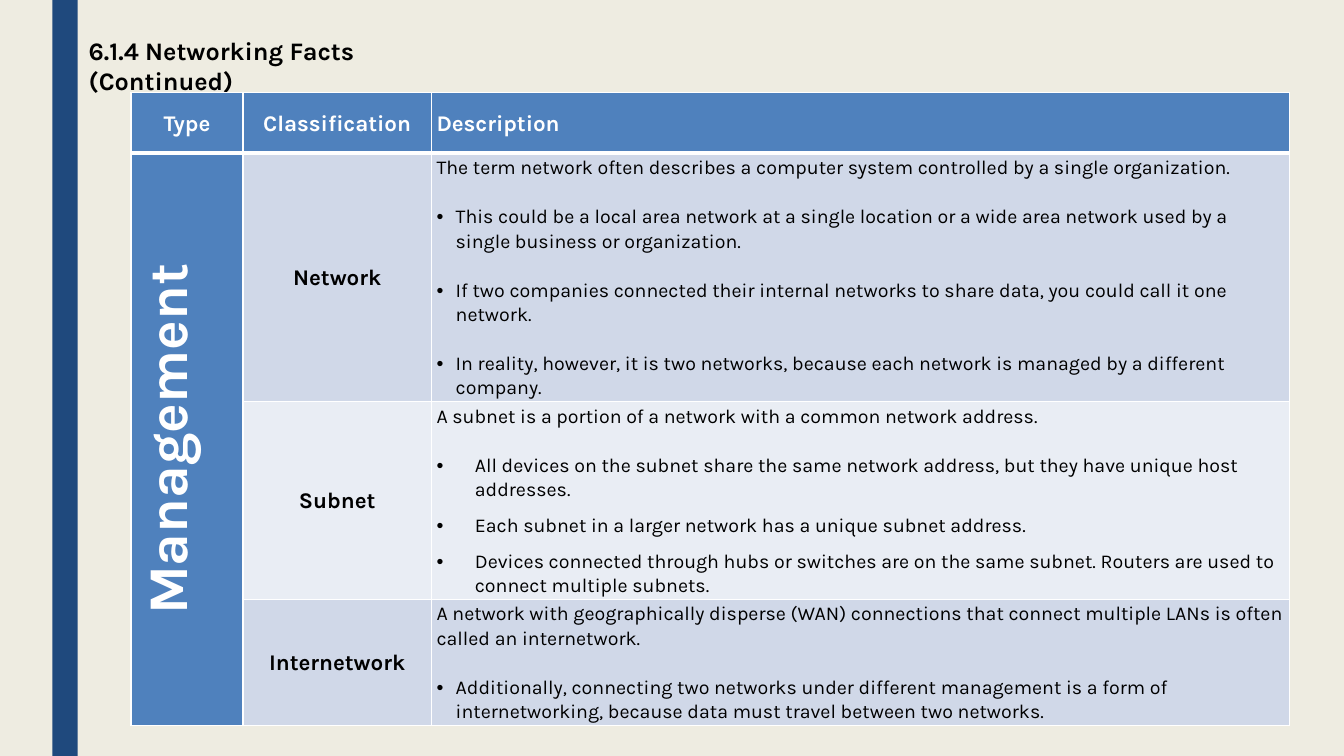
from dataclasses import dataclass
from typing import Any

from pptx import Presentation
from pptx import util as u
from pptx.dml.color import RGBColor
from pptx.enum import shapes, text
from pptx.oxml.ns import qn
from lxml import etree

FONT = "Karla"
BLACK, WHITE = "000000", "FFFFFF"
NAVY, BLUE, CREAM = "1F497D", "4F81BD", "EEECE1"
BAND_DARK, BAND_LIGHT = "D0D8E8", "E9EDF4"
LINE_SPACING = 1.07
BLANK_LINE = 17.5  # points: the gap that sets off a bullet
CENTER, LEFT = text.PP_ALIGN.CENTER, text.PP_ALIGN.LEFT


@dataclass
class Line:
    """One paragraph of a cell; a bullet hangs by its indent in inches."""
    words: str
    indent: float = 0
    before: float = 0
    after: float = 0


@dataclass
class Classification:
    name: str
    fill: str
    height: float
    lines: list[Line]


HEADINGS = [("Type", 1.11, CENTER), ("Classification", 1.87, CENTER), ("Description", 8.51, LEFT)]
HEADER_HEIGHT = 0.6
CLASSIFICATIONS = [
    Classification("Network", BAND_DARK, 2.17, [
        Line("The term network often describes a computer system controlled by a single organization."),
        Line("This could be a local area network at a single location or a wide area network "
             "used by a single business or organization.", 0.19, BLANK_LINE),
        Line("If two companies connected their internal networks to share data, "
             "you could call it one network.", 0.19, BLANK_LINE),
        Line("In reality, however, it is two networks, because each network is managed "
             "by a different company.", 0.19, BLANK_LINE),
    ]),
    Classification("Subnet", BAND_LIGHT, 1.69, [
        Line("A subnet is a portion of a network with a common network address."),
        Line("All devices on the subnet share the same network address, but they have "
             "unique host addresses.", 0.38, BLANK_LINE, 8),
        Line("Each subnet in a larger network has a unique subnet address.", 0.38, 0, 8),
        Line("Devices connected through hubs or switches are on the same subnet. "
             "Routers are used to connect multiple subnets.", 0.38, 0, 8),
    ]),
    Classification("Internetwork", BAND_DARK, 1.19, [
        Line("A network with geographically disperse (WAN) connections that connect "
             "multiple LANs is often called an internetwork."),
        Line("Additionally, connecting two networks under different management is a form of "
             "internetworking, because data must travel between two networks.", 0.19, BLANK_LINE),
    ]),
]


def color(value: str) -> RGBColor:
    return RGBColor.from_string(value)


def apply(target: Any, values: dict[str, Any]) -> None:
    for name, value in values.items():
        setattr(target, name, value)


def paint(target: Any, value: str) -> None:
    target.fill.solid()
    target.fill.fore_color.rgb = color(value)


def write(para: Any, words: str, size: float, ink: str, bold: bool) -> None:
    span = para.add_run()
    span.text = words
    apply(span.font, {"name": FONT, "size": u.Pt(size), "bold": bold})
    span.font.color.rgb = color(ink)


def add_bullet(para: Any, indent: float) -> None:
    properties = para._p.get_or_add_pPr()
    properties.set("marL", str(u.Inches(indent)))
    properties.set("indent", str(u.Inches(-indent)))
    etree.SubElement(properties, qn("a:buFont"), typeface="Arial")
    etree.SubElement(properties, qn("a:buChar"), char="•")


def add_borders(cell: Any, top: float = 1, bottom: float = 1) -> None:
    properties = cell._tc.get_or_add_tcPr()
    for side, width in {"L": 1, "R": 1, "T": top, "B": bottom}.items():
        line = etree.SubElement(properties, qn(f"a:ln{side}"), w=str(u.Pt(width)))
        fill = etree.SubElement(line, qn("a:solidFill"))
        etree.SubElement(fill, qn("a:srgbClr"), val=WHITE)


def format_cell(cell: Any, fill: str, top: float = 1, bottom: float = 1,
                margin: float = 0.01, anchor: Any = text.MSO_ANCHOR.MIDDLE) -> None:
    add_borders(cell, top, bottom)
    paint(cell, fill)
    apply(cell, {
        "margin_left": u.Inches(0.05), "margin_right": u.Inches(0.05),
        "margin_top": u.Inches(margin), "margin_bottom": u.Inches(margin),
        "vertical_anchor": anchor,
    })


def write_label(cell: Any, words: str, size: float, ink: str,
                align: Any = CENTER, space: float = 0) -> None:
    para = cell.text_frame.paragraphs[0]
    apply(para, {"alignment": align, "line_spacing": LINE_SPACING,
                 "space_before": u.Pt(space), "space_after": u.Pt(space)})
    write(para, words, size, ink, True)


def write_description(cell: Any, lines: list[Line]) -> None:
    frame = cell.text_frame
    for index, line in enumerate(lines):
        para = frame.add_paragraph() if index else frame.paragraphs[0]
        apply(para, {"alignment": LEFT, "line_spacing": LINE_SPACING,
                     "space_before": u.Pt(line.before), "space_after": u.Pt(line.after)})
        if line.indent:
            add_bullet(para, line.indent)
        write(para, line.words, 14, BLACK, False)


def add_side_bar(page: Any) -> None:
    bar = page.shapes.add_shape(shapes.MSO_SHAPE.RECTANGLE, u.Inches(0.52), 0,
                                u.Inches(0.25), u.Inches(7.5))
    paint(bar, NAVY)
    bar.line.fill.background()
    bar.shadow.inherit = False


def add_title(page: Any) -> None:
    title = page.shapes.title
    apply(title, {"left": u.Inches(0.78), "top": u.Inches(0.3),
                  "width": u.Inches(3.88), "height": u.Inches(0.4)})
    frame = title.text_frame
    apply(frame, {"word_wrap": True, "auto_size": text.MSO_AUTO_SIZE.NONE,
                  "vertical_anchor": text.MSO_ANCHOR.TOP})
    para = frame.paragraphs[0]
    apply(para, {"alignment": LEFT, "line_spacing": 1.0, "space_before": u.Pt(0)})
    write(para, "6.1.4 Networking Facts (Continued)", 18, BLACK, True)


def add_facts_table(page: Any) -> None:
    heights = [HEADER_HEIGHT] + [item.height for item in CLASSIFICATIONS]
    widths = [width for _, width, _ in HEADINGS]
    table = page.shapes.add_table(len(heights), len(widths), u.Inches(1.3), u.Inches(0.92),
                                  u.Inches(sum(widths)), u.Inches(sum(heights))).table
    for column, width in zip(table.columns, widths):
        column.width = u.Inches(width)
    for row, height in zip(table.rows, heights):
        row.height = u.Inches(height)

    # Header row
    for index, (heading, _, align) in enumerate(HEADINGS):
        cell = table.cell(0, index)
        format_cell(cell, BLUE, bottom=3)
        write_label(cell, heading, 16, WHITE, align, 3.8)

    # Type column, one cell with upward text
    kind = table.cell(1, 0)
    kind.merge(table.cell(len(CLASSIFICATIONS), 0))
    format_cell(kind, BLUE, top=3)
    kind._tc.get_or_add_tcPr().set("vert", "vert270")
    write_label(kind, "Management", 40, WHITE)

    # Classification rows
    for index, item in enumerate(CLASSIFICATIONS, start=1):
        top = 3 if index == 1 else 1
        name, description = table.cell(index, 1), table.cell(index, 2)
        format_cell(name, item.fill, top)
        write_label(name, item.name, 16, BLACK)
        format_cell(description, item.fill, top, margin=0.02, anchor=text.MSO_ANCHOR.TOP)
        write_description(description, item.lines)


def main() -> None:
    deck = Presentation()
    apply(deck, {"slide_width": u.Inches(13.33), "slide_height": u.Inches(7.5)})
    page = deck.slides.add_slide(deck.slide_layouts[5])
    paint(page.background, CREAM)
    add_side_bar(page)
    add_facts_table(page)
    add_title(page)
    deck.save("out.pptx")


if __name__ == "__main__":
    main()
